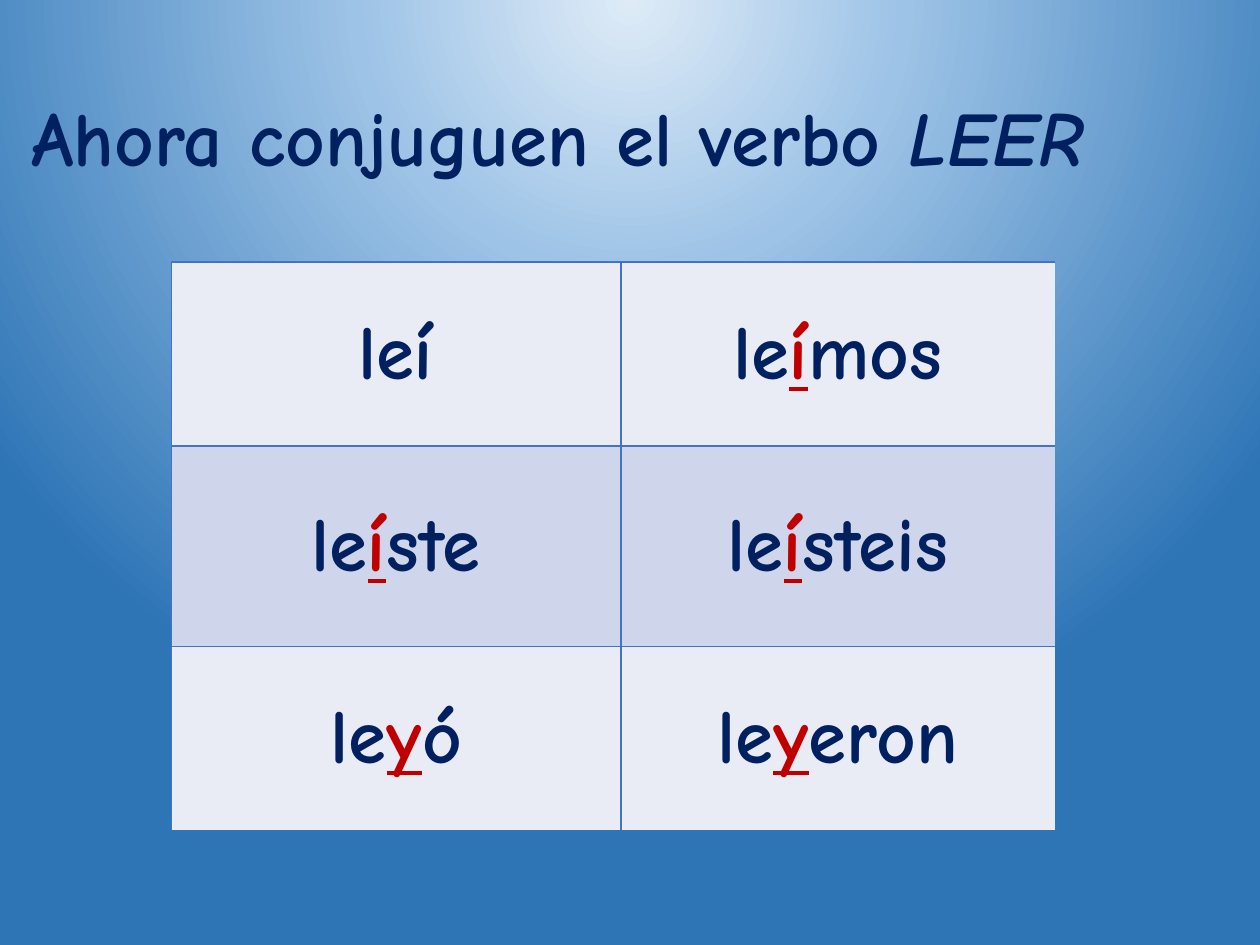
from lxml import etree
from pptx import Presentation, util as u
from pptx.dml.color import RGBColor
from pptx.enum import text
from pptx.oxml import parse_xml
from pptx.oxml.ns import nsdecls, qn

FONT = "Comic Neue"
NAVY, RED, BORDER = "002060", "C00000", "4472C4"
BANDS = ["E9EBF5", "CFD5EA"]
GRADIENT = [(0, "DEEBF7"), (35, "9DC3E6"), (100, "2E75B6")]
COLUMN_WIDTHS = [3.57, 3.44]
ROW_HEIGHTS = [1.46, 1.59, 1.46]
# Each form is split into stem, highlighted letter and ending
FORMS = [
    [("leí", "", ""), ("le", "í", "mos")],
    [("le", "í", "ste"), ("le", "í", "steis")],
    [("le", "y", "ó"), ("le", "y", "eron")],
]


def color(value):
    return RGBColor.from_string(value)


def add_text(para, content, fill=NAVY, italic=None, underline=None):
    span = para.add_run()
    span.text = content
    font = span.font
    font.name, font.size, font.bold = FONT, u.Pt(44), True
    font.italic, font.underline = italic, underline
    font.color.rgb = color(fill)


def set_background(page):
    fill = page.background.fill
    fill.solid()
    stops = "".join(
        f'<a:gs pos="{place * 1000}"><a:srgbClr val="{value}"/></a:gs>'
        for place, value in GRADIENT)
    gradient = parse_xml(
        f'<a:gradFill {nsdecls("a")} rotWithShape="1"><a:gsLst>{stops}</a:gsLst>'
        '<a:path path="circle"><a:fillToRect l="50000" t="-80000" r="50000" b="180000"/>'
        '</a:path></a:gradFill>')
    solid = page.background._cSld.find(".//" + qn("a:solidFill"))
    solid.getparent().replace(solid, gradient)


def set_border(cell, side, visible):
    line = etree.SubElement(cell._tc.get_or_add_tcPr(), qn(f"a:ln{side}"), w=str(u.Pt(1)))
    if visible:
        solid = etree.SubElement(line, qn("a:solidFill"))
        etree.SubElement(solid, qn("a:srgbClr"), val=BORDER)
    else:
        etree.SubElement(line, qn("a:noFill"))


def add_title(page):
    box = page.shapes.title
    box.left, box.top = u.Inches(0.15), u.Inches(0.66)
    box.width, box.height = u.Inches(9.76), u.Inches(0.84)
    frame = box.text_frame
    frame.vertical_anchor = text.MSO_ANCHOR.TOP
    frame.auto_size = text.MSO_AUTO_SIZE.SHAPE_TO_FIT_TEXT
    para = frame.paragraphs[0]
    para.alignment = text.PP_ALIGN.LEFT
    add_text(para, "Ahora conjuguen el verbo ")
    add_text(para, "LEER", italic=True)


def fill_cell(cell, form, band, inner_right, inner_bottom):
    # The outer right and bottom edges stay open
    for side, visible in zip("LRTB", (True, inner_right, True, inner_bottom)):
        set_border(cell, side, visible)
    cell.fill.solid()
    cell.fill.fore_color.rgb = color(band)
    cell.vertical_anchor = text.MSO_ANCHOR.MIDDLE
    para = cell.text_frame.paragraphs[0]
    para.alignment = text.PP_ALIGN.CENTER
    stem, letter, ending = form
    add_text(para, stem)
    if letter:
        add_text(para, letter, fill=RED, underline=True)
        add_text(para, ending)


def add_conjugation(page):
    frame = page.shapes.add_table(
        len(ROW_HEIGHTS), len(COLUMN_WIDTHS), u.Inches(1.36), u.Inches(2.08),
        u.Inches(sum(COLUMN_WIDTHS)), u.Inches(sum(ROW_HEIGHTS)))
    table = frame.table
    table.first_row = table.horz_banding = False
    for column, width in zip(table.columns, COLUMN_WIDTHS):
        column.width = u.Inches(width)
    for row, height in zip(table.rows, ROW_HEIGHTS):
        row.height = u.Inches(height)
    for r, forms in enumerate(FORMS):
        for c, form in enumerate(forms):
            fill_cell(table.cell(r, c), form, BANDS[r % 2],
                      c < len(forms) - 1, r < len(FORMS) - 1)


def main():
    deck = Presentation()
    deck.slide_width, deck.slide_height = u.Inches(10), u.Inches(7.5)
    page = deck.slides.add_slide(deck.slide_layouts[5])
    set_background(page)
    add_title(page)
    add_conjugation(page)
    deck.save("out.pptx")


if __name__ == "__main__":
    main()
